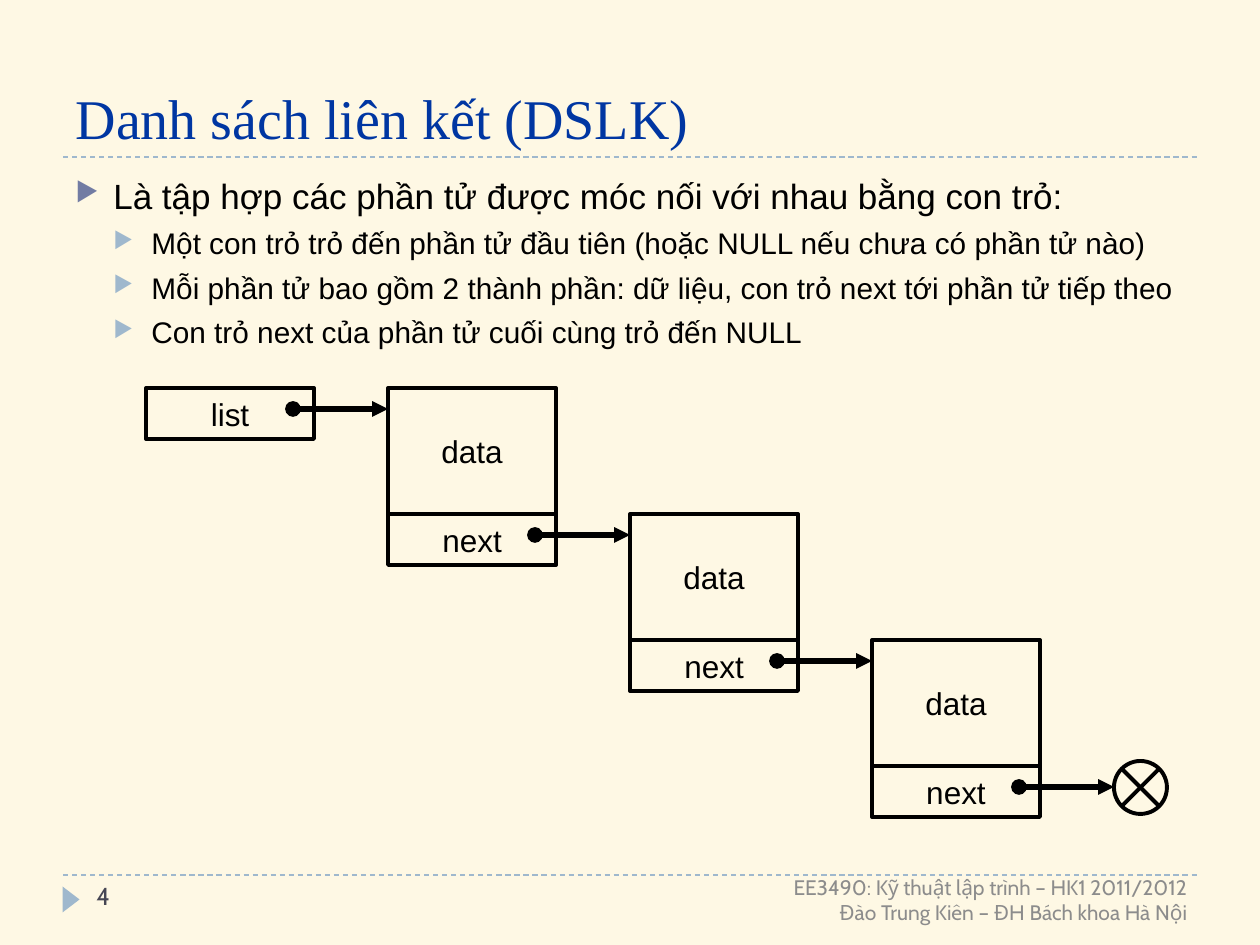
from pptx import Presentation
from pptx import util as u
from pptx.dml.color import RGBColor
from pptx.enum import dml, shapes, text
from pptx.oxml.ns import qn
from lxml import etree

TITLE = "Danh sách liên kết (DSLK)"
POINTS = [
    (0, "Là tập hợp các phần tử được móc nối với nhau bằng con trỏ:"),
    (1, "Một con trỏ trỏ đến phần tử đầu tiên (hoặc NULL nếu chưa có phần tử nào)"),
    (1, "Mỗi phần tử bao gồm 2 thành phần: dữ liệu, con trỏ next tới phần tử tiếp theo"),
    (1, "Con trỏ next của phần tử cuối cùng trỏ đến NULL"),
]
POINTERS = ["list", "next", "next", "next"]
DATA = "data"
PAGE = ["4"]
CREDIT = ["EE3490: Kỹ thuật lập trình – HK1 2011/2012",
          "Đào Trung Kiên – ĐH Bách khoa Hà Nội"]

CREAM = RGBColor(0xFE, 0xF8, 0xE4)
BLUE = RGBColor(0x00, 0x36, 0xA2)
PALE_BLUE = RGBColor(0x9F, 0xB8, 0xCD)
SLATE = RGBColor(0x46, 0x46, 0x53)
GRAY = RGBColor(0x8C, 0x8C, 0x8C)
BLACK = RGBColor(0, 0, 0)

# size in points, space before in points, bullet colour, by level
LEVELS = [(20, 0, RGBColor(0x72, 0x7C, 0xA3)), (17, 5, PALE_BLUE)]
INDENT = 38

CHAIN_X, CHAIN_Y = 146, 388
STEP_X, STEP_Y = 242, 126
CELL_W, POINTER_H = 168, 51
DOT_X, DOT_Y = 147, 21
NULL_SIZE = 53


def px(n):
    return u.Emu(round(n * 914400 / 126))


def box(*lengths):
    return [px(n) for n in lengths]


def write(paragraph, words, size, font, color):
    run = paragraph.add_run()
    run.text = words
    run.font.size = u.Pt(size)
    run.font.name = font
    run.font.color.rgb = color


def add_bullet(paragraph, level, color):
    props = paragraph._p.get_or_add_pPr()
    props.set("marL", str(px(INDENT * (level + 1))))
    props.set("indent", str(-px(INDENT)))
    bullet_color = etree.SubElement(props, qn("a:buClr"))
    etree.SubElement(bullet_color, qn("a:srgbClr"), val=str(color))
    etree.SubElement(props, qn("a:buSzPct"), val="76000")
    etree.SubElement(props, qn("a:buChar"), char="▶")


def add_line(slide, x1, y1, x2, y2, color, width):
    line = slide.shapes.add_connector(
        shapes.MSO_CONNECTOR.STRAIGHT, *box(x1, y1, x2, y2))
    line.line.color.rgb = color
    line.line.width = u.Pt(width)
    etree.SubElement(line._element.spPr, qn("a:effectLst"))
    return line


def add_rule(slide, y):
    rule = add_line(slide, 63, y, 1197, y, PALE_BLUE, 0.75)
    rule.line.dash_style = dml.MSO_LINE.DASH


def add_pointer(slide, x, y):
    arrow = add_line(slide, x + DOT_X, y + DOT_Y, x + STEP_X, y + DOT_Y, BLACK, 3)
    ln = arrow.line._get_or_add_ln()
    etree.SubElement(ln, qn("a:headEnd"), type="oval")
    etree.SubElement(ln, qn("a:tailEnd"), type="triangle")


def add_outline(slide, kind, *place):
    outline = slide.shapes.add_shape(kind, *box(*place))
    outline.shadow.inherit = False
    outline.fill.background()
    outline.line.color.rgb = BLACK
    outline.line.width = u.Pt(2.25)
    return outline


def add_cell(slide, words, *place):
    cell = add_outline(slide, shapes.MSO_SHAPE.RECTANGLE, *place)
    frame = cell.text_frame
    frame.vertical_anchor = text.MSO_ANCHOR.MIDDLE
    frame.paragraphs[0].alignment = text.PP_ALIGN.CENTER
    write(frame.paragraphs[0], words, 18, "Arial", BLACK)


def add_frame(slide, *place):
    frame = slide.shapes.add_textbox(*box(*place)).text_frame
    frame.word_wrap = True
    return frame


def add_paragraphs(frame, count):
    return [frame.paragraphs[0]] + [frame.add_paragraph() for _ in range(count - 1)]


def add_footer(slide, lines, place, size, color, align, anchor):
    frame = add_frame(slide, *place)
    frame.vertical_anchor = anchor
    for paragraph, words in zip(add_paragraphs(frame, len(lines)), lines):
        paragraph.alignment = align
        write(paragraph, words, size, "Cabin", color)


def add_title(slide):
    title = slide.shapes.title
    title.left, title.top, title.width, title.height = box(63, 21, 1134, 136)
    frame = title.text_frame
    frame.word_wrap = True
    frame.vertical_anchor = text.MSO_ANCHOR.BOTTOM
    frame.paragraphs[0].alignment = text.PP_ALIGN.LEFT
    write(frame.paragraphs[0], TITLE, 32, "Times New Roman", BLUE)


def add_points(slide):
    frame = add_frame(slide, 63, 168, 1134, 200)
    for paragraph, (level, words) in zip(add_paragraphs(frame, len(POINTS)), POINTS):
        size, before, color = LEVELS[level]
        paragraph.level = level
        paragraph.space_before = u.Pt(before)
        add_bullet(paragraph, level, color)
        write(paragraph, words, size, "Arial", BLACK)


def add_chain(slide):
    for i, name in enumerate(POINTERS):
        x, y = CHAIN_X + i * STEP_X, CHAIN_Y + i * STEP_Y
        if i > 0:
            add_cell(slide, DATA, x, y - STEP_Y, CELL_W, STEP_Y)
        add_cell(slide, name, x, y, CELL_W, POINTER_H)
        add_pointer(slide, x, y)
    add_outline(slide, shapes.MSO_SHAPE.FLOWCHART_SUMMING_JUNCTION,
                x + STEP_X, y + DOT_Y - NULL_SIZE // 2, NULL_SIZE, NULL_SIZE)


def main():
    deck = Presentation()
    deck.slide_width, deck.slide_height = box(1260, 945)
    slide = deck.slides.add_slide(deck.slide_layouts[5])
    slide.background.fill.solid()
    slide.background.fill.fore_color.rgb = CREAM

    for y in (157, 875):
        add_rule(slide, y)
    marker = slide.shapes.add_shape(
        shapes.MSO_SHAPE.ISOSCELES_TRIANGLE, *box(58, 891, 26, 17))
    marker.rotation = 90
    marker.shadow.inherit = False
    marker.fill.solid()
    marker.fill.fore_color.rgb = PALE_BLUE
    marker.line.fill.background()

    add_title(slide)
    add_points(slide)
    add_footer(slide, PAGE, (84, 875, 273, 50), 14, SLATE,
               text.PP_ALIGN.LEFT, text.MSO_ANCHOR.TOP)
    add_footer(slide, CREDIT, (431, 875, 769, 50), 12, GRAY,
               text.PP_ALIGN.RIGHT, text.MSO_ANCHOR.MIDDLE)
    add_chain(slide)
    deck.save("out.pptx")


if __name__ == "__main__":
    main()
